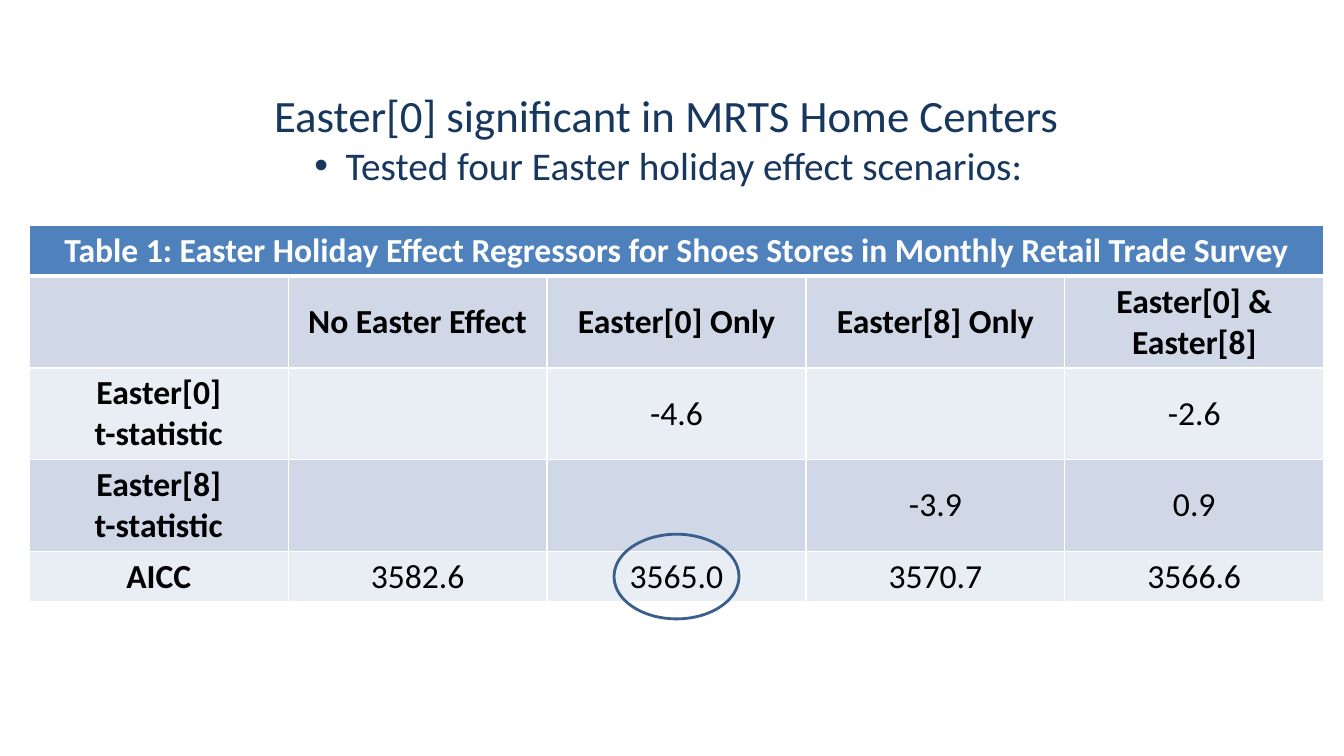
from lxml.etree import SubElement
from pptx import Presentation
from pptx.dml.color import RGBColor
from pptx.enum.shapes import MSO_SHAPE
from pptx.enum.text import MSO_ANCHOR, PP_ALIGN
from pptx.oxml.ns import qn
from pptx.util import Inches, Pt

COLORS = {
    "navy": "17375E",
    "header": "4F81BD",
    "dark_band": "D0D8E8",
    "light_band": "E9EDF4",
    "white": "FFFFFF",
    "black": "000000",
    "ring": "3A5F8C",
}
FONT = "Calibri"
TABLE_BOX = (0.29, 2.24, 12.84, 3.73)
ROW_HEIGHTS = (0.5, 0.91, 0.91, 0.91, 0.5)
TABLE_TITLE = "Table 1: Easter Holiday Effect Regressors for Shoes Stores in Monthly Retail Trade Survey"
ROWS = [
    ("", "No Easter Effect", "Easter[0] Only", "Easter[8] Only", "Easter[0] & Easter[8]"),
    ("Easter[0]\nt-statistic", "", "-4.6", "", "-2.6"),
    ("Easter[8]\nt-statistic", "", "", "-3.9", "0.9"),
    ("AICC", "3582.6", "3565.0", "3570.7", "3566.6"),
]


def color(name):
    return RGBColor.from_string(COLORS[name])


def style_font(paragraph, size, tint, bold=False):
    font = paragraph.font
    font.name, font.size, font.bold = FONT, Pt(size), bold
    font.color.rgb = color(tint)


def indent(paragraph, left, hanging=0, bullet=None):
    properties = paragraph._p.get_or_add_pPr()
    properties.set("marL", str(Inches(left)))
    properties.set("indent", str(Inches(hanging)))
    if bullet:
        SubElement(properties, qn("a:buFont"), typeface="Arial")
        SubElement(properties, qn("a:buChar"), char=bullet)


def add_heading(page, left, top, width, height):
    frame = page.shapes.add_textbox(*map(Inches, (left, top, width, height))).text_frame
    frame.word_wrap = True
    title = frame.paragraphs[0]
    title.text = "Easter[0] significant in MRTS Home Centers"
    indent(title, 0.1)
    style_font(title, 32, "navy")
    point = frame.add_paragraph()
    point.text = "Tested four Easter holiday effect scenarios:"
    point.level = 1
    indent(point, 0.81, -0.31, "•")
    style_font(point, 28, "navy")


def add_borders(cell, bottom=1):
    properties = cell._tc.get_or_add_tcPr()
    for side, width in (("L", 1), ("R", 1), ("T", 1), ("B", bottom)):
        line = SubElement(properties, qn(f"a:ln{side}"), w=str(Pt(width)))
        fill = SubElement(line, qn("a:solidFill"))
        SubElement(fill, qn("a:srgbClr"), val=COLORS["white"])


def fill_cell(cell, text, band, tint="black", bold=False, bottom=1):
    add_borders(cell, bottom)
    cell.fill.solid()
    cell.fill.fore_color.rgb = color(band)
    cell.vertical_anchor = MSO_ANCHOR.MIDDLE
    cell.text = text
    for paragraph in cell.text_frame.paragraphs:
        paragraph.alignment = PP_ALIGN.CENTER
        style_font(paragraph, 24, tint, bold)


def add_results_table(page, left, top, width, height):
    columns = len(ROWS[0])
    box = map(Inches, (left, top, width, height))
    table = page.shapes.add_table(len(ROW_HEIGHTS), columns, *box).table
    for column in table.columns:
        column.width = Inches(width / columns)
    for row, row_height in zip(table.rows, ROW_HEIGHTS):
        row.height = Inches(row_height)
    for column in range(columns):
        text = TABLE_TITLE if column == 0 else ""
        fill_cell(table.cell(0, column), text, "header", "white", True, 3)
    table.cell(0, 0).merge(table.cell(0, columns - 1))
    for row, values in enumerate(ROWS, 1):
        band = "dark_band" if row % 2 else "light_band"
        for column, value in enumerate(values):
            fill_cell(table.cell(row, column), value, band, bold=row == 1 or column == 0)


def ring_lowest_aicc(page, left, top, width, height):
    ring_width, ring_height = 1.24, 0.84
    center_x = left + width / 2
    center_y = top + height - ROW_HEIGHTS[-1] / 2
    ring = page.shapes.add_shape(
        MSO_SHAPE.OVAL,
        Inches(center_x - ring_width / 2),
        Inches(center_y - ring_height / 2),
        Inches(ring_width),
        Inches(ring_height),
    )
    ring.shadow.inherit = False
    ring.fill.background()
    ring.line.color.rgb = color("ring")
    ring.line.width = Pt(2)


def main():
    deck = Presentation()
    deck.slide_width, deck.slide_height = Inches(13.33), Inches(7.5)
    page = deck.slides.add_slide(deck.slide_layouts[6])
    add_heading(page, 2.52, 0.82, 8.17, 1.41)
    add_results_table(page, *TABLE_BOX)
    ring_lowest_aicc(page, *TABLE_BOX)
    deck.save("out.pptx")


if __name__ == "__main__":
    main()
